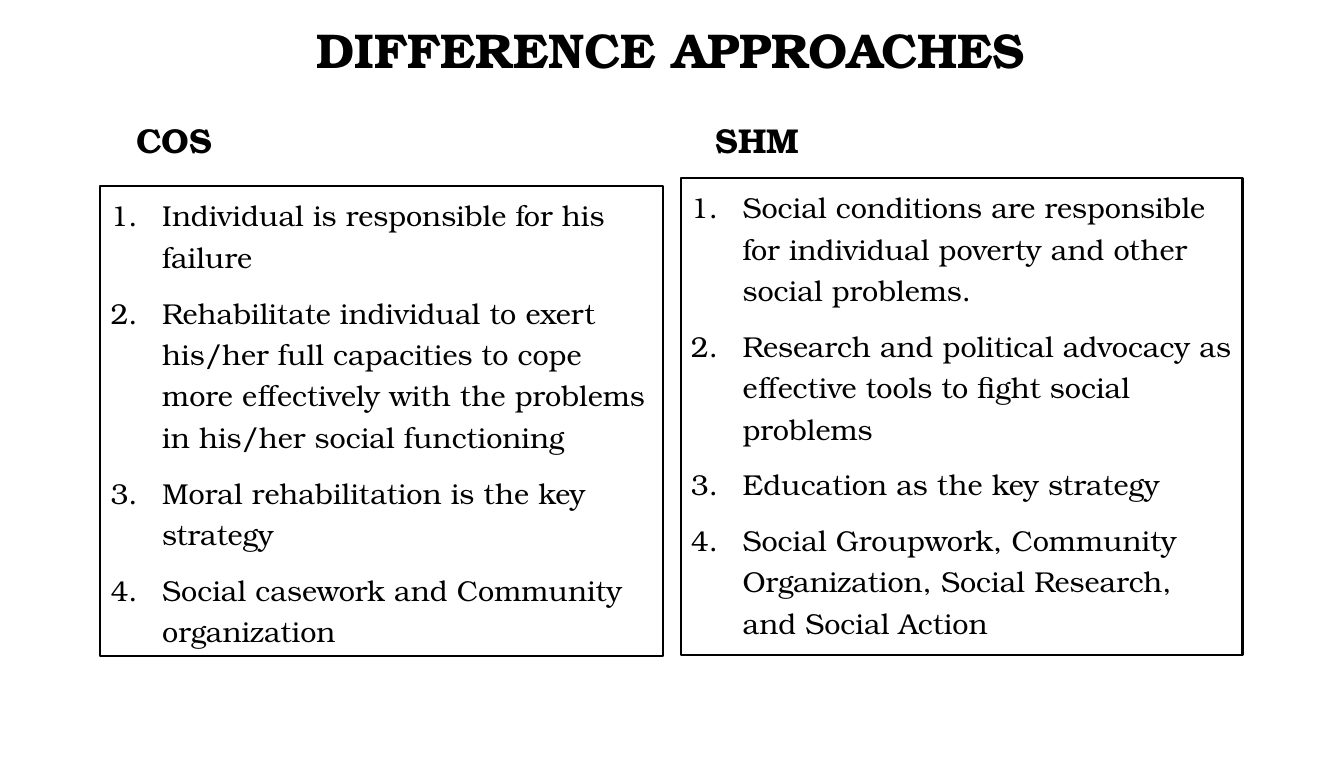
from pptx import Presentation
from pptx.dml.color import RGBColor
from pptx.enum.shapes import MSO_SHAPE
from pptx.enum.text import MSO_ANCHOR as ANCHOR, PP_ALIGN as ALIGN
from pptx.oxml.xmlchemy import OxmlElement
from pptx.util import Inches, Pt

FONT = "TeX Gyre Bonum"
BLACK, WHITE = "000000", "FFFFFF"
TITLE = "DIFFERENCE APPROACHES"
# heading, heading box, list box (left, top, width, height), items
COLUMNS = [
    ("COS", (1.22, 0.7, 5.2, 0.9), (0.97, 1.8, 5.44, 4.54), [
        "Individual is responsible for his failure",
        "Rehabilitate individual to exert his/her full capacities to cope "
        "more effectively with the problems in his/her social functioning",
        "Moral rehabilitation is the key strategy",
        "Social casework and Community organization",
    ]),
    ("SHM", (6.82, 0.7, 5.19, 0.9), (6.58, 1.72, 5.43, 4.61), [
        "Social conditions are responsible for individual poverty and other "
        "social problems.",
        "Research and political advocacy as effective tools to fight social "
        "problems",
        "Education as the key strategy",
        "Social Groupwork, Community Organization, Social Research, "
        "and Social Action",
    ]),
]


def color(value):
    return RGBColor.from_string(value)


def number(p, indent=0.5):
    """Give a paragraph an automatic number with a hanging indent."""
    pPr = p._p.get_or_add_pPr()
    pPr.set("marL", str(Inches(indent)))
    pPr.set("indent", str(-Inches(indent)))
    bullet = OxmlElement("a:buAutoNum")
    bullet.set("type", "arabicPeriod")
    pPr.append(bullet)


def write(sp, lines, size, bold=False, align=ALIGN.LEFT, anchor=ANCHOR.TOP,
          spacing=1.0, before=0, numbered=False):
    tf = sp.text_frame
    tf.word_wrap = True
    tf.vertical_anchor = anchor
    for i, line in enumerate(lines):
        p = tf.add_paragraph() if i else tf.paragraphs[0]
        p.alignment = align
        p.line_spacing = spacing
        p.space_before = Pt(before)
        if numbered:
            number(p)
        r = p.add_run()
        r.text = line
        r.font.name, r.font.size, r.font.bold = FONT, Pt(size), bold
        r.font.color.rgb = color(BLACK)


def add_text(s, box, text, size, **fmt):
    sp = s.shapes.add_textbox(*map(Inches, box))
    write(sp, [text], size, bold=True, **fmt)


def add_list(s, box, items):
    sp = s.shapes.add_shape(MSO_SHAPE.RECTANGLE, *map(Inches, box))
    sp.shadow.inherit = False
    sp.fill.solid()
    sp.fill.fore_color.rgb = color(WHITE)
    sp.line.color.rgb = color(BLACK)
    sp.line.width = Pt(1.5)
    write(sp, items, 20, spacing=1.2, before=10, numbered=True)


def main():
    prs = Presentation()
    prs.slide_width, prs.slide_height = Inches(12.99), Inches(7.5)
    s = prs.slides.add_slide(prs.slide_layouts[6])
    add_text(s, (0.97, 0.16, 11.03, 0.7), TITLE, 34,
             align=ALIGN.CENTER, anchor=ANCHOR.MIDDLE, spacing=0.9)
    for heading, heading_box, list_box, items in COLUMNS:
        add_text(s, heading_box, heading, 24, anchor=ANCHOR.BOTTOM, before=10)
        add_list(s, list_box, items)
    prs.save("out.pptx")


if __name__ == "__main__":
    main()
